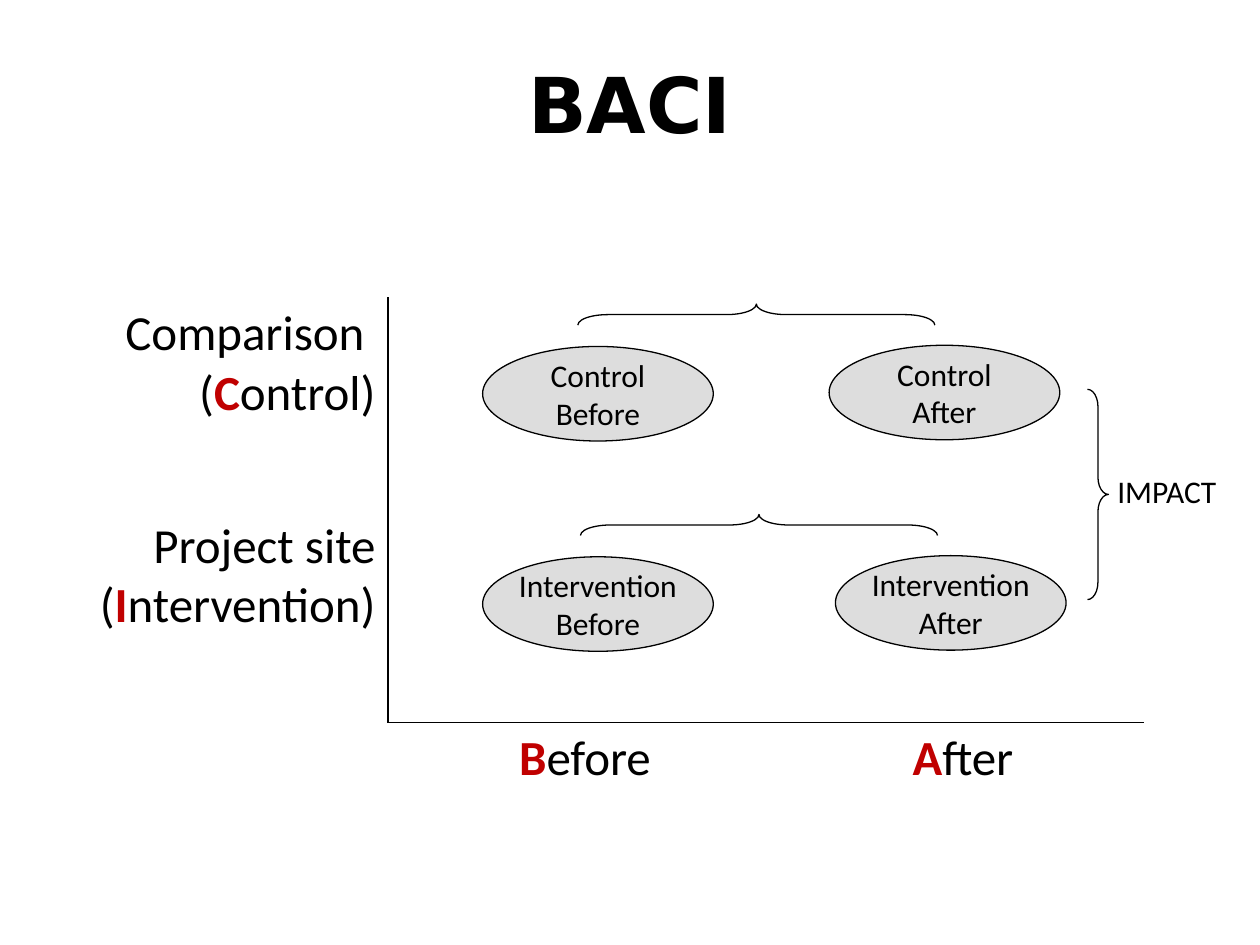
from lxml.etree import SubElement
from pptx import Presentation
from pptx.dml.color import RGBColor
from pptx.enum.shapes import MSO_SHAPE as Preset
from pptx.enum.text import MSO_ANCHOR as Anchor, PP_ALIGN as Align
from pptx.oxml.ns import qn
from pptx.util import Pt

BLACK = RGBColor(0, 0, 0)
RED = RGBColor(0xC0, 0, 0)
GREY = RGBColor(0xDD, 0xDD, 0xDD)

# Content: each line is (before, red letter, after)
TITLE = "BACI"
IMPACT = "IMPACT"
LABELS = {
    (0, 0): [("Comparison ", "", ""), ("(", "C", "ontrol)")],
    (1, 0): [("Project site", "", ""), ("(", "I", "ntervention)")],
    (2, 1): [("", "B", "efore")],
    (2, 2): [("", "A", "fter")],
}
AXES = {  # borders of the cells that touch the two axes
    (0, 0): "R", (1, 0): "R", (0, 1): "L", (1, 1): "LB",
    (1, 2): "B", (2, 1): "T", (2, 2): "T",
}
GROUPS = [  # name, left of "After" ellipse, left of brace
    ("Control", 473.8, 426.2),
    ("Intervention", 477.4, 427.7),
]

# Layout in points
TABLE_LEFT, TABLE_TOP, COLUMN, ROW = 5.76, 170, 216, 121.5
BEFORE_LEFT, BEFORE_TOP, AFTER_TOP = 275.8, 198, 197.3
ELLIPSE_WIDTH, ELLIPSE_HEIGHT = 131.8, 54
BRACE_TOP, BRACE_WIDTH, BRACE_LENGTH = 77.8, 12, 204
GROUP_STEP = 120.2


def style(font, size, name="Calibri", color=BLACK, bold=False):
    font.size, font.name, font.bold = Pt(size), name, bold
    font.color.rgb = color


def place(left, top, width, height):
    return Pt(left), Pt(top), Pt(width), Pt(height)


def add_text(page, text, area, size, name="Calibri", bold=False):
    box = page.shapes.add_textbox(*place(*area))
    box.text_frame.text = text
    style(box.text_frame.paragraphs[0].runs[0].font, size, name, bold=bold)
    return box.text_frame


def add_outlined(page, preset, area):
    shape = page.shapes.add_shape(preset, *place(*area))
    shape.shadow.inherit = False
    shape.fill.background()
    shape.line.color.rgb = BLACK
    shape.line.width = Pt(0.75)
    return shape


def add_ellipse(page, lines, left, top):
    ellipse = add_outlined(page, Preset.OVAL, (left, top, ELLIPSE_WIDTH, ELLIPSE_HEIGHT))
    ellipse.fill.solid()
    ellipse.fill.fore_color.rgb = GREY
    frame = ellipse.text_frame
    frame.text = "\n".join(lines)
    frame.word_wrap = False
    frame.vertical_anchor = Anchor.MIDDLE
    for paragraph in frame.paragraphs:
        paragraph.alignment = Align.CENTER
        style(paragraph.runs[0].font, 18)


def add_brace(page, preset, area, curl, rotation=0):
    brace = add_outlined(page, preset, area)
    brace.adjustments[0] = curl
    brace.rotation = rotation


def set_borders(cell, sides):
    properties = cell._tc.get_or_add_tcPr()
    for side in "LRTB":
        line = SubElement(properties, qn("a:ln" + side), w=str(Pt(1)))
        if side in sides:
            fill = SubElement(line, qn("a:solidFill"))
            SubElement(fill, qn("a:srgbClr"), val=str(BLACK))
        else:
            SubElement(line, qn("a:noFill"))


def fill_label(cell, lines, alignment):
    for index, parts in enumerate(lines):
        frame = cell.text_frame
        paragraph = frame.paragraphs[0] if index == 0 else frame.add_paragraph()
        paragraph.alignment = alignment
        paragraph._p.get_or_add_pPr().set("marL", str(Pt(9)))
        paragraph._p.get_or_add_pPr().set("indent", "0")
        for text, color in zip(parts, (BLACK, RED, BLACK)):
            if text:
                span = paragraph.add_run()
                span.text = text
                style(span.font, 28, color=color, bold=color == RED)


def main():
    deck = Presentation()
    deck.slide_width, deck.slide_height = Pt(720), Pt(540)
    page = deck.slides.add_slide(deck.slide_layouts[6])

    # Title
    frame = add_text(page, TITLE, (36, 30, 648, 57), 44, "DejaVu Sans", True)
    frame.word_wrap = True
    frame.vertical_anchor = Anchor.MIDDLE
    frame.paragraphs[0].alignment = Align.CENTER

    # Table with labels and axes
    area = place(TABLE_LEFT, TABLE_TOP, 3 * COLUMN, 3 * ROW)
    table = page.shapes.add_table(3, 3, *area).table
    table.first_row = table.horz_banding = False
    for row in range(3):
        for column in range(3):
            cell = table.cell(row, column)
            set_borders(cell, AXES.get((row, column), ""))
            cell.fill.background()
            fill_label(cell, LABELS.get((row, column), []),
                       Align.CENTER if column else Align.RIGHT)

    # Before and after ellipses, joined by a brace in each group
    for index, (name, after_left, brace_left) in enumerate(GROUPS):
        shift = index * GROUP_STEP
        add_ellipse(page, (name, "Before"), BEFORE_LEFT, BEFORE_TOP + shift)
        add_ellipse(page, (name, "After"), after_left, AFTER_TOP + shift)
        add_brace(page, Preset.LEFT_BRACE,
                  (brace_left, BRACE_TOP + shift, BRACE_WIDTH, BRACE_LENGTH), 1.42, 90)

    # Impact
    add_brace(page, Preset.RIGHT_BRACE, (621.4, 222.5, BRACE_WIDTH, GROUP_STEP), 0.83)
    add_text(page, IMPACT, (631.4, 266.4, 82.8, 29), 18).word_wrap = False

    deck.save("out.pptx")


if __name__ == "__main__":
    main()
